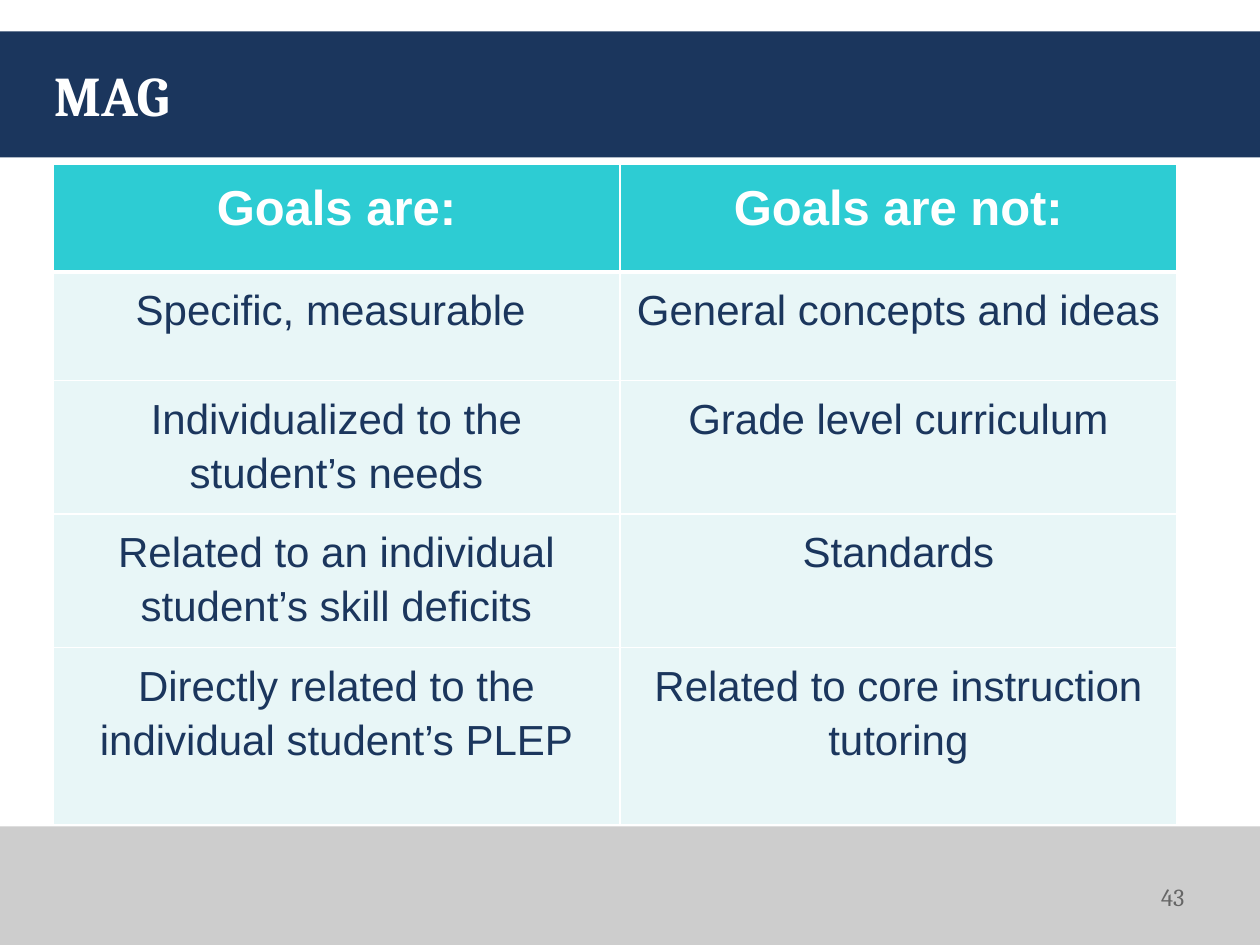
import pptx
import pptx.util
import pptx.dml.color
import pptx.enum.shapes
import pptx.enum.text
import pptx.oxml
import pptx.oxml.ns

Inches = pptx.util.Inches
Pt = pptx.util.Pt
ALIGN = pptx.enum.text.PP_ALIGN
ANCHOR = pptx.enum.text.MSO_ANCHOR

COLORS = {
    "navy": "1B365D",
    "teal": "2DCCD3",
    "pale": "E8F6F7",
    "gray": "CDCDCD",
    "dark": "666666",
    "white": "FFFFFF",
}

GOALS = [
    ("Goals are:", "Goals are not:"),
    ("Specific, measurable ", "General concepts and ideas"),
    ("Individualized to the student’s needs", "Grade level curriculum"),
    ("Related to an individual student’s skill deficits", "Standards"),
    ("Directly related to the individual student’s PLEP",
     "Related to core instruction tutoring"),
]


class Deck:
    def __init__(self, slide):
        self.slide = slide
        self.head = "Cambria"
        self.body = "Arial"

    def color(self, name):
        return pptx.dml.color.RGBColor.from_string(COLORS[name])

    def words(self, frame, text, font, size, color, bold=False, align=ALIGN.LEFT):
        frame.text = text
        para = frame.paragraphs[0]
        para.alignment = align
        style = para.runs[0].font
        style.name, style.size, style.bold = font, Pt(size), bold
        style.color.rgb = self.color(color)
        return para

    def band(self, top, height, color):
        shape = self.slide.shapes.add_shape(
            pptx.enum.shapes.MSO_SHAPE.RECTANGLE,
            Inches(0), Inches(top), Inches(10), Inches(height))
        shape.shadow.inherit = False
        shape.fill.solid()
        shape.fill.fore_color.rgb = self.color(color)
        shape.line.fill.background()

    def label(self, box, text, size, color, anchor=ANCHOR.TOP, **style):
        frame = self.slide.shapes.add_textbox(*map(Inches, box)).text_frame
        frame.word_wrap = True
        frame.vertical_anchor = anchor
        self.words(frame, text, self.head, size, color, **style)

    def border(self, cell, side, width):
        line = pptx.oxml.parse_xml(
            f'<a:ln{side} {pptx.oxml.ns.nsdecls("a")} w="{Pt(width)}">'
            f'<a:solidFill><a:srgbClr val="{COLORS["white"]}"/></a:solidFill>'
            f'</a:ln{side}>')
        cell._tc.get_or_add_tcPr().append(line)

    def cell(self, cell, text, row):
        top = row == 0
        cell.margin_left = cell.margin_right = Inches(0.07)
        cell.margin_top = cell.margin_bottom = Inches(0.07)
        # The rule under the header is thicker than the rest
        for side in "LRTB":
            thick = (row, side) in ((0, "B"), (1, "T"))
            self.border(cell, side, 3 if thick else 1)
        cell.fill.solid()
        cell.fill.fore_color.rgb = self.color("teal" if top else "pale")
        para = self.words(cell.text_frame, text, self.body, 28 if top else 24,
                          "white" if top else "navy", top, ALIGN.CENTER)
        para.line_spacing = 1.15
        para.space_after = Pt(10)

    def table(self, left, top, widths, heights, rows):
        table = self.slide.shapes.add_table(
            len(rows), len(widths), Inches(left), Inches(top),
            Inches(sum(widths)), Inches(sum(heights))).table
        for col, width in zip(table.columns, widths):
            col.width = Inches(width)
        for row, height in zip(table.rows, heights):
            row.height = Inches(height)
        for r, texts in enumerate(rows):
            for c, text in enumerate(texts):
                self.cell(table.cell(r, c), text, r)


def main():
    prs = pptx.Presentation()
    prs.slide_width, prs.slide_height = Inches(10), Inches(7.5)
    deck = Deck(prs.slides.add_slide(prs.slide_layouts[6]))

    # Header and footer bands
    deck.band(0.25, 1, "navy")
    deck.band(6.56, 0.94, "gray")

    # Title and page number
    deck.label((0.33, 0.25, 9.08, 1), "MAG", 32, "white", ANCHOR.MIDDLE, bold=True)
    deck.label((9, 6.95, 0.5, 0.4), "43", 14, "dark", align=ALIGN.RIGHT)

    # Goals table
    deck.table(0.42, 1.3, (4.5, 4.42), (0.86, 0.86, 1, 1, 1.41), GOALS)

    prs.save("out.pptx")


if __name__ == "__main__":
    main()
